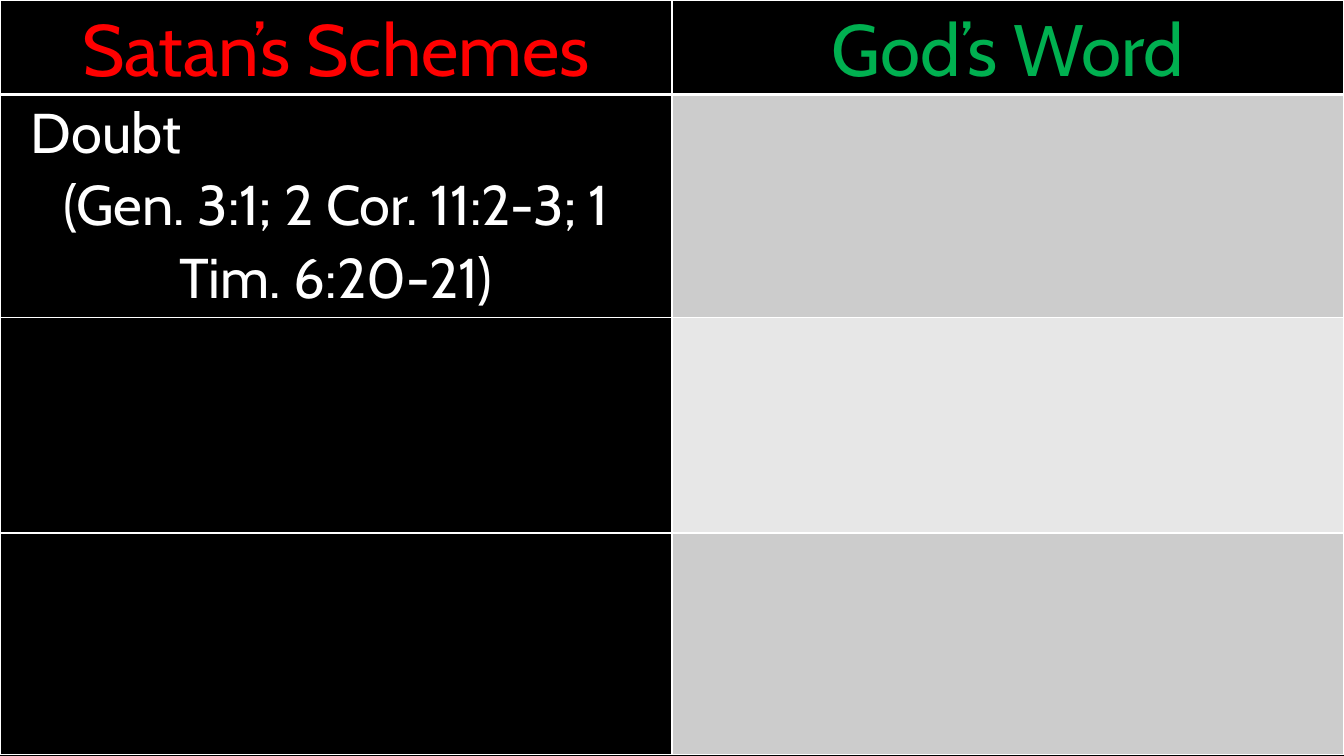
from lxml.etree import SubElement
from pptx import Presentation
from pptx.dml.color import RGBColor as RGB
from pptx.enum.text import PP_ALIGN as Align
from pptx.oxml.ns import qn
from pptx.util import Cm, Pt

COLORS = {
    "black": "000000", "white": "FFFFFF", "red": "FF0000",
    "green": "00B050", "gray": "CCCCCC", "light": "E7E7E7",
}
FONT = "Cabin"
HEADINGS = [("Satan’s Schemes", "red"), ("God’s Word", "green")]
SCHEME = "Doubt"
VERSES = "(Gen. 3:1; 2 Cor. 11:2-3; 1 Tim. 6:20-21)"
ROW_FILLS = [("black", "black"), ("black", "gray"),
             ("black", "light"), ("black", "gray")]
ROW_HEIGHTS = [Cm(2.38), Cm(5.61), Cm(5.44), Cm(5.57)]
SLIDE_WIDTH, SLIDE_HEIGHT = Cm(33.87), Cm(19.05)


def color(name):
    return RGB.from_string(COLORS[name])


def write(paragraph, text, size, color_name, align=Align.CENTER):
    paragraph.alignment = align
    paragraph.line_spacing = 1.07
    run = paragraph.add_run()
    run.text = text
    run.font.name = FONT
    run.font.size = Pt(size)
    run.font.bold = False
    run.font.color.rgb = color(color_name)


def add_borders(cell, top, bottom):
    """Draw white borders; top and bottom are widths in points."""
    properties = cell._tc.get_or_add_tcPr()
    sides = [("L", 1), ("R", 1), ("T", top), ("B", bottom)]
    for position, (side, width) in enumerate(sides):
        line = SubElement(properties, qn(f"a:ln{side}"), w=str(Pt(width)))
        fill = SubElement(line, qn("a:solidFill"))
        SubElement(fill, qn("a:srgbClr"), val=COLORS["white"])
        properties.insert(position, line)


def main():
    presentation = Presentation()
    presentation.slide_width = SLIDE_WIDTH
    presentation.slide_height = SLIDE_HEIGHT
    slide = presentation.slides.add_slide(presentation.slide_layouts[6])
    slide.background.fill.solid()
    slide.background.fill.fore_color.rgb = color("black")

    table = slide.shapes.add_table(
        len(ROW_FILLS), len(HEADINGS), 0, 0, SLIDE_WIDTH, sum(ROW_HEIGHTS)).table
    for row, height in zip(table.rows, ROW_HEIGHTS):
        row.height = height

    for row_index, fills in enumerate(ROW_FILLS):
        for column_index, fill_name in enumerate(fills):
            cell = table.cell(row_index, column_index)
            cell.margin_left = cell.margin_right = Cm(0.18)
            cell.margin_top = cell.margin_bottom = 0
            cell.fill.solid()
            cell.fill.fore_color.rgb = color(fill_name)
            add_borders(cell, top=3 if row_index == 1 else 1,
                        bottom=3 if row_index == 0 else 1)

    for column_index, (heading, color_name) in enumerate(HEADINGS):
        frame = table.cell(0, column_index).text_frame
        write(frame.paragraphs[0], heading, 52, color_name)

    frame = table.cell(1, 0).text_frame
    scheme = frame.paragraphs[0]
    write(scheme, SCHEME, 40, "white", Align.LEFT)
    scheme._p.get_or_add_pPr().set("marL", str(Cm(0.6)))
    write(frame.add_paragraph(), VERSES, 40, "white")

    presentation.save("out.pptx")


if __name__ == "__main__":
    main()
